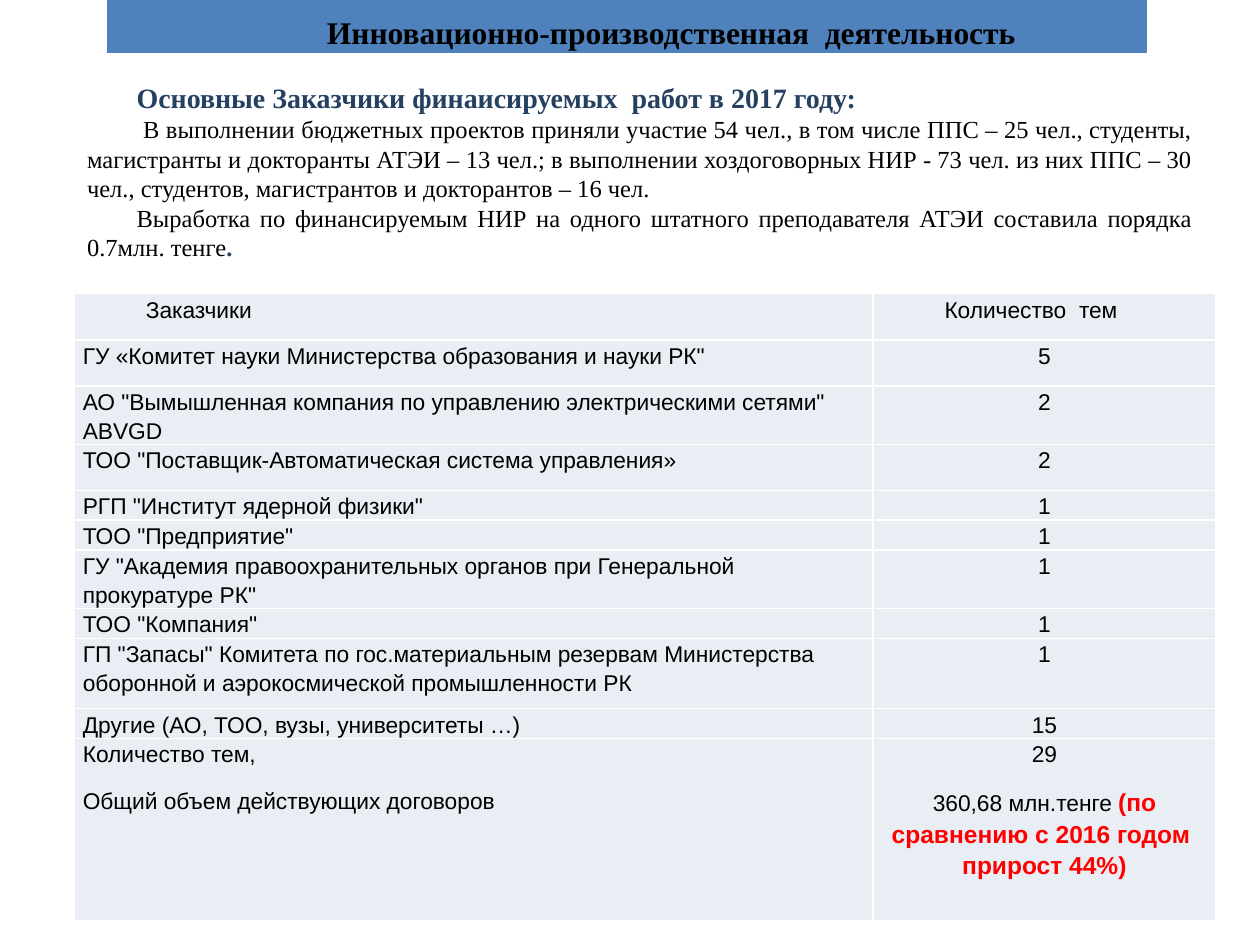
from pptx import Presentation
from pptx.dml.color import RGBColor
from pptx.enum.shapes import MSO_SHAPE
from pptx.enum.text import MSO_ANCHOR, MSO_AUTO_SIZE, PP_ALIGN
from pptx.util import Cm, Pt

LEFT, CENTER, JUSTIFY = PP_ALIGN.LEFT, PP_ALIGN.CENTER, PP_ALIGN.JUSTIFY
RECTANGLE, TOP, NO_AUTOFIT = MSO_SHAPE.RECTANGLE, MSO_ANCHOR.TOP, MSO_AUTO_SIZE.NONE
SERIF, SANS = "Times New Roman", "Arial"
BLACK, NAVY, RED, BLUE, PALE = "000000", "254061", "FF0000", "4F81BD", "E9EDF4"

# A run is (text, size, colour, bold)
HEADING = [("Инновационно-производственная  деятельность", 18, BLACK, True)]
INTRO = [
    [("Основные Заказчики финаисируемых  работ в 2017 году: ", 16, NAVY, True)],
    [(" В выполнении бюджетных проектов приняли участие 54 чел., в том числе "
      "ППС – 25 чел., студенты, магистранты и докторанты АТЭИ – 13 чел.; в выполнении "
      "хоздоговорных НИР - 73 чел. из них ППС – 30 чел., студентов, магистрантов "
      "и докторантов – 16 чел.", 14, BLACK, False)],
    [("Выработка по финансируемым НИР на одного штатного преподавателя АТЭИ "
      "составила порядка 0.7млн. тенге", 14, BLACK, False), (".", 14, NAVY, True)],
]

COLUMNS = [("Заказчики", 16.1), ("Количество  тем", 6.91)]
HEADER_HEIGHT = 0.93
# Customer, number of topics, row height in cm
CUSTOMERS = [
    ('ГУ «Комитет науки Министерства образования и науки РК"', 5, 0.93),
    ('АО "Вымышленная компания по управлению электрическими сетями"  ABVGD', 2, 1.17),
    ('ТОО "Поставщик-Автоматическая система управления»', 2, 0.93),
    ('РГП "Институт ядерной физики"', 1, 0.6),
    ('ТОО "Предприятие"', 1, 0.6),
    ('ГУ "Академия правоохранительных органов при Генеральной прокуратуре РК"', 1, 1.18),
    ('ТОО "Компания"', 1, 0.6),
    ('ГП "Запасы" Комитета по гос.материальным резервам Министерства '
     'оборонной и аэрокосмической промышленности РК', 1, 1.42),
    ("Другие (АО, ТОО, вузы, университеты …)", 15, 0.6),
]
TOTAL_LABELS = ["Количество тем,", "Общий объем действующих договоров"]
TOTAL_VALUES = [
    [("29", 13, BLACK, False)],
    [("360,68 млн.тенге ", 13, BLACK, False),
     ("(по сравнению с 2016 годом  прирост 44%)", 14, RED, True)],
]
TOTAL_HEIGHT = 3.68


def rgb(colour):
    return RGBColor.from_string(colour)


def plain(text):
    return [(str(text), 13, BLACK, False)]


def write(frame, paragraphs, font, align, indent=0, line=1.0, after=0):
    """Fill a text frame with paragraphs, each a list of runs."""
    for index, runs in enumerate(paragraphs):
        paragraph = frame.add_paragraph() if index else frame.paragraphs[0]
        paragraph.alignment = align
        paragraph.line_spacing = line
        paragraph.space_before, paragraph.space_after = Pt(0), Pt(after)
        properties = paragraph._p.get_or_add_pPr()
        properties.set("marL", "0")
        properties.set("indent", str(Cm(indent)))
        properties.get_or_add_defRPr().addprevious(
            properties.makeelement(properties.tag.replace("pPr", "buNone"), {}))
        for text, size, colour, bold in runs:
            run = paragraph.add_run()
            run.text = text
            run.font.name, run.font.size, run.font.bold = font, Pt(size), bold
            run.font.color.rgb = rgb(colour)


def place(shape, left, top, width, height):
    shape.left, shape.top = Cm(left), Cm(top)
    shape.width, shape.height = Cm(width), Cm(height)
    shape.text_frame.word_wrap = True
    shape.text_frame.auto_size = NO_AUTOFIT
    shape.text_frame.vertical_anchor = TOP


def fill_cell(cell, paragraphs, align, indent=0):
    cell.fill.solid()
    cell.fill.fore_color.rgb = rgb(PALE)
    cell.margin_left = cell.margin_right = Cm(0.17)
    cell.margin_top = cell.margin_bottom = 0
    write(cell.text_frame, paragraphs, SANS, align, indent, line=1.15, after=10)


presentation = Presentation()
presentation.slide_width, presentation.slide_height = Cm(25.4), Cm(19.05)
slide = presentation.slides.add_slide(presentation.slide_layouts[1])
heading, intro = slide.placeholders

banner = slide.shapes.add_shape(RECTANGLE, Cm(2.16), 0, Cm(20.96), Cm(1.07))
banner.shadow.inherit = False
banner.fill.solid()
banner.fill.fore_color.rgb = rgb(BLUE)
banner.line.fill.background()
heading._element.addprevious(banner._element)

place(heading, 1.5, 0.14, 22.8, 0.98)
write(heading.text_frame, [HEADING], SERIF, CENTER, indent=1.27)
place(intro, 1.5, 1.5, 22.8, 3.9)
write(intro.text_frame, INTRO, SERIF, JUSTIFY, indent=1)

heights = [HEADER_HEIGHT, *(height for _, _, height in CUSTOMERS), TOTAL_HEIGHT]
widths = [width for _, width in COLUMNS]
table = slide.shapes.add_table(len(heights), len(widths), Cm(1.5), Cm(5.92),
                               Cm(sum(widths)), Cm(sum(heights))).table
table.first_row = table.horz_banding = False
for row, height in zip(table.rows, heights):
    row.height = Cm(height)
for number, (title, width) in enumerate(COLUMNS):
    table.columns[number].width = Cm(width)
    fill_cell(table.cell(0, number), [plain(title)], LEFT, indent=1.27)
for number, (customer, topics, _) in enumerate(CUSTOMERS, start=1):
    fill_cell(table.cell(number, 0), [plain(customer)], LEFT)
    fill_cell(table.cell(number, 1), [plain(topics)], CENTER)
last = len(heights) - 1
fill_cell(table.cell(last, 0), [plain(label) for label in TOTAL_LABELS], LEFT)
fill_cell(table.cell(last, 1), TOTAL_VALUES, CENTER)

presentation.save("out.pptx")
